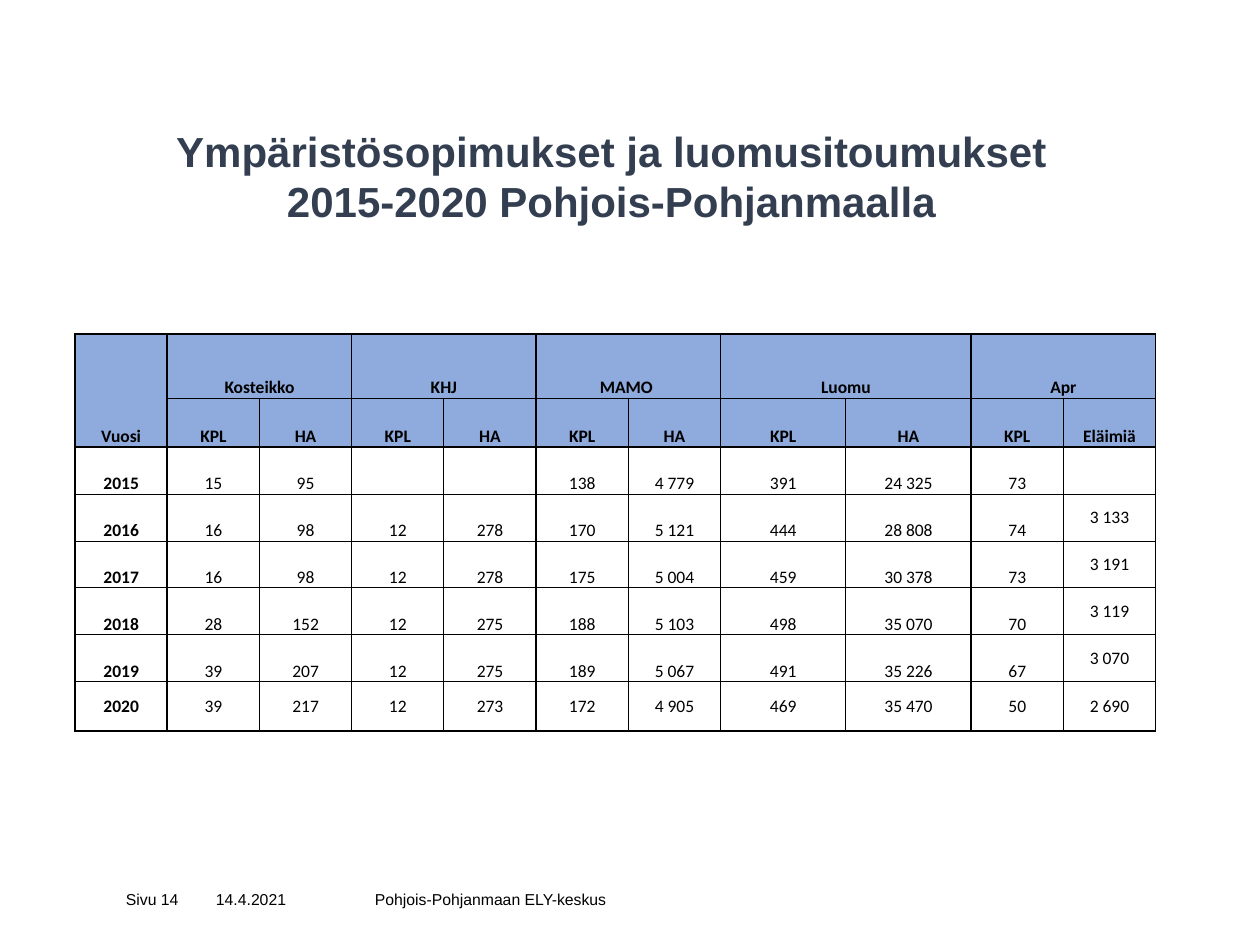
from dataclasses import dataclass

from lxml.etree import SubElement
from pptx import Presentation
from pptx.dml.color import RGBColor as RGB
from pptx.enum.text import MSO_ANCHOR as ANCHOR, PP_ALIGN as ALIGN
from pptx.oxml.ns import qn
from pptx.util import Pt

PX = 914400 / 126


@dataclass(frozen=True)
class Theme:
    ink: RGB = RGB(0, 0, 0)
    title_ink: RGB = RGB(0x33, 0x3F, 0x50)
    header: RGB = RGB(0x8F, 0xAA, 0xDC)
    line: str = "000000"
    thick: float = 1
    thin: float = 0.5
    text_font: str = "Arial"
    table_font: str = "Calibri"
    title_size: int = 24
    table_size: int = 10
    footer_size: int = 9


THEME = Theme()
TITLE_FORMAT = dict(name=THEME.text_font, size=Pt(THEME.title_size), bold=True)
FOOTER_FORMAT = dict(name=THEME.text_font, size=Pt(THEME.footer_size), bold=False)
TABLE_FORMAT = dict(name=THEME.table_font, size=Pt(THEME.table_size))
CELL_FORMAT = dict(margin_left=px_inset if (px_inset := round(PX)) else 0,
                   margin_right=px_inset, margin_top=px_inset, margin_bottom=0)

GROUPS = ["Kosteikko", "KHJ", "MAMO ", "Luomu", "Apr"]
UNITS = ["KPL", "HA"] * 4 + ["KPL", "Eläimiä"]
YEARS = [
    ["2015", "15", "95", "", "", "138", "4 779", "391", "24 325", "73", ""],
    ["2016", "16", "98", "12", "278", "170", "5 121", "444", "28 808", "74", "3 133"],
    ["2017", "16", "98", "12", "278", "175", "5 004", "459", "30 378", "73", "3 191"],
    ["2018", "28", "152", "12", "275", "188", "5 103", "498", "35 070", "70", "3 119"],
    ["2019", "39", "207", "12", "275", "189", "5 067", "491", "35 226", "67", "3 070"],
    ["2020", "39", "217", "12", "273", "172", "4 905", "469", "35 470", "50", "2 690"],
]
COLUMN_SHARES = [92] * 7 + [125] * 2 + [92] * 2
ROW_SHARES = [64, 49] + [47] * 5 + [49]
GROUP_EDGES = {0, 1, 3, 5, 7, 9, 11}
SECTION_EDGES = {0, 2, 8}
THIN_KHJ_ROWS = {5, 6}


def px(length):
    return round(length * PX)


def apply(target, values):
    for name, value in values.items():
        setattr(target, name, value)


def write(paragraph, text, style, color, align):
    paragraph.alignment = align
    run = paragraph.add_run()
    run.text = text
    apply(run.font, style)
    run.font.color.rgb = color


def add_text_frame(slide, box, inset):
    frame = slide.shapes.add_textbox(*map(px, box)).text_frame
    apply(frame, dict(word_wrap=True, vertical_anchor=ANCHOR.MIDDLE,
                      margin_left=px(inset), margin_right=px(inset),
                      margin_top=0, margin_bottom=0))
    return frame


def add_title(slide, box):
    frame = add_text_frame(slide, box, 13)
    subject = frame.paragraphs[0]
    write(subject, "Ympäristösopimukset ja luomusitoumukset",
          TITLE_FORMAT, THEME.title_ink, ALIGN.CENTER)
    subject._p.get_or_add_pPr().set("marR", str(px(35)))
    write(frame.add_paragraph(), "2015-2020 Pohjois-Pohjanmaalla",
          TITLE_FORMAT, THEME.title_ink, ALIGN.CENTER)


def add_footer(slide, box):
    left, top, width, height = box
    parts = [("Sivu 14", 0, 89), ("14.4.2021", 90, 159),
             ("Pohjois-Pohjanmaan ELY-keskus", 249, width - 249)]
    for text, offset, part_width in parts:
        frame = add_text_frame(slide, (left + offset, top, part_width, height), 13)
        write(frame.paragraphs[0], text, FOOTER_FORMAT, THEME.ink, ALIGN.LEFT)


def column_edge(edge, row):
    thinned = edge == 3 and row in THIN_KHJ_ROWS
    return THEME.thick if edge in GROUP_EDGES and not thinned else THEME.thin


def row_edge(edge):
    return THEME.thick if edge in SECTION_EDGES else THEME.thin


def draw_borders(cell, row, column):
    right = column + (cell.span_width if cell.is_merge_origin else 1)
    bottom = row + (cell.span_height if cell.is_merge_origin else 1)
    weights = dict(lnL=column_edge(column, row), lnR=column_edge(right, row),
                   lnT=row_edge(row), lnB=row_edge(bottom))
    properties = cell._tc.get_or_add_tcPr()
    for side, weight in weights.items():
        border = SubElement(properties, qn(f"a:{side}"), w=str(Pt(weight)))
        SubElement(SubElement(border, qn("a:solidFill")), qn("a:srgbClr"), val=THEME.line)


def fill_cell(cell, text, row, column):
    centered = row == 7 or (column == 10 and row > 2)
    apply(cell, CELL_FORMAT)
    cell.vertical_anchor = ANCHOR.MIDDLE if centered else ANCHOR.BOTTOM
    draw_borders(cell, row, column)
    if row < 2:
        cell.fill.solid()
        cell.fill.fore_color.rgb = THEME.header
    else:
        cell.fill.background()
    if text:
        style = TABLE_FORMAT | dict(bold=row < 2 or column == 0)
        write(cell.text_frame.paragraphs[0], text, style, THEME.ink, ALIGN.CENTER)


def add_agreements_table(slide, box):
    group_row = ["Vuosi"] + [label for group in GROUPS for label in (group, "")]
    rows = [group_row, ["", *UNITS], *YEARS]
    table = slide.shapes.add_table(len(rows), len(group_row), *map(px, box)).table
    apply(table, dict(first_row=False, horz_banding=False))
    for column, share in zip(table.columns, COLUMN_SHARES):
        column.width = px(box[2] * share / sum(COLUMN_SHARES))
    for row, share in zip(table.rows, ROW_SHARES):
        row.height = px(box[3] * share / sum(ROW_SHARES))
    table.cell(0, 0).merge(table.cell(1, 0))
    for column in range(1, len(group_row), 2):
        table.cell(0, column).merge(table.cell(0, column + 1))
    for row, texts in enumerate(rows):
        for column, text in enumerate(texts):
            fill_cell(table.cell(row, column), text, row, column)


def main():
    deck = Presentation()
    apply(deck, dict(slide_width=px(1260), slide_height=px(945)))
    slide = deck.slides.add_slide(deck.slide_layouts[6])
    add_title(slide, (113, 106, 1032, 139))
    add_footer(slide, (113, 890, 805, 19))
    add_agreements_table(slide, (75, 334, 1081, 397))
    deck.save("out.pptx")


if __name__ == "__main__":
    main()
